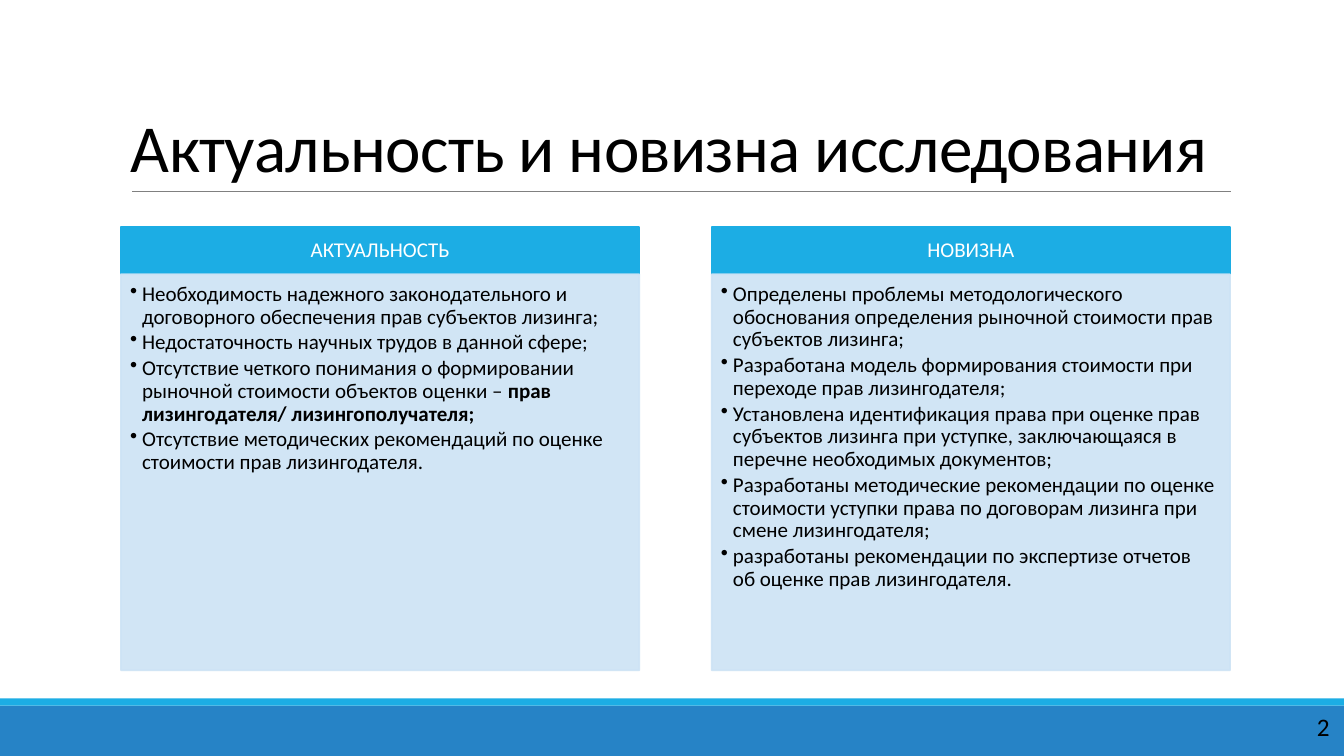
import dataclasses

import lxml.etree
import pptx
import pptx.dml.color
import pptx.enum.shapes
import pptx.enum.text
import pptx.oxml.ns
import pptx.util

Inches = pptx.util.Inches
Pt = pptx.util.Pt
ALIGN = pptx.enum.text.PP_ALIGN
ANCHOR = pptx.enum.text.MSO_ANCHOR


@dataclasses.dataclass(frozen=True)
class Theme:
    font: str = "Calibri"
    black: str = "000000"
    white: str = "FFFFFF"
    gray: str = "808080"
    blue: str = "2683C6"
    cyan: str = "1CADE4"
    pale: str = "CDE3F5"
    title: int = 48
    page: int = 18
    body: int = 15


THEME = Theme()

CARDS = [
    ("АКТУАЛЬНОСТЬ", [
        ["Необходимость надежного законодательного и договорного обеспечения прав субъектов лизинга;"],
        ["Недостаточность научных трудов в данной сфере;"],
        ["Отсутствие четкого понимания о формировании рыночной стоимости объектов оценки – ",
         "прав лизингодателя/ лизингополучателя;"],
        ["Отсутствие методических рекомендаций по оценке стоимости прав лизингодателя."],
    ]),
    ("НОВИЗНА", [
        ["Определены проблемы методологического обоснования определения рыночной стоимости прав субъектов лизинга;"],
        ["Разработана модель формирования стоимости при переходе прав лизингодателя;"],
        ["Установлена идентификация права при оценке прав субъектов лизинга при уступке, "
         "заключающаяся в перечне необходимых документов;"],
        ["Разработаны методические рекомендации по оценке стоимости уступки права "
         "по договорам лизинга при смене лизингодателя;"],
        ["разработаны рекомендации по экспертизе отчетов об оценке прав лизингодателя."],
    ]),
]


def color(code):
    return pptx.dml.color.RGBColor.from_string(code)


def add_node(parent, tag, **attrs):
    return lxml.etree.SubElement(parent, pptx.oxml.ns.qn(tag), **attrs)


def fade(fill, alpha):
    for node in fill.iter(pptx.oxml.ns.qn("a:srgbClr")):
        add_node(node, "a:alpha", val=str(alpha * 1000))


def write(shape, paras, size, ink=THEME.black, align=ALIGN.LEFT, anchor=ANCHOR.TOP,
          inset=(0.1, 0.05, 0.1, 0.05), lead=1.0, after=0, track=0, bullet=False, wrap=True):
    frame = shape.text_frame
    frame.word_wrap = wrap
    frame.vertical_anchor = anchor
    (frame.margin_left, frame.margin_top,
     frame.margin_right, frame.margin_bottom) = map(Inches, inset)
    for i, parts in enumerate(paras):
        para = frame.paragraphs[0] if i == 0 else frame.add_paragraph()
        para.alignment = align
        para.line_spacing = lead
        para.space_after = Pt(after)
        if bullet:
            props = para._p.get_or_add_pPr()
            props.set("marL", str(Inches(0.12)))
            props.set("indent", str(-Inches(0.12)))
            add_node(props, "a:buChar", char="•")
        for j, part in enumerate(parts):
            run = para.add_run()
            run.text = part
            run.font.name = THEME.font
            run.font.size = Pt(size)
            run.font.bold = j > 0
            run.font.color.rgb = color(ink)
            if track:
                run._r.get_or_add_rPr().set("spc", str(track))


def add_box(slide, place, fill, edge=False, alpha=100):
    box = slide.shapes.add_shape(pptx.enum.shapes.MSO_SHAPE.RECTANGLE, *map(Inches, place))
    box.shadow.inherit = False
    box.fill.solid()
    box.fill.fore_color.rgb = color(fill)
    if edge:
        box.line.color.rgb = color(fill)
        box.line.width = Pt(1.25)
    else:
        box.line.fill.background()
    if alpha < 100:
        fade(box._element.spPr, alpha)
    return box


def add_text(slide, place, text, size, **style):
    box = slide.shapes.add_textbox(*map(Inches, place))
    write(box, [[text]], size, **style)


def add_rule(slide, left, right, top):
    rule = slide.shapes.add_connector(pptx.enum.shapes.MSO_CONNECTOR.STRAIGHT,
                                      *map(Inches, (left, top, right, top)))
    rule.line.color.rgb = color(THEME.gray)
    rule.line.width = Pt(0.5)
    add_node(rule._element.spPr, "a:effectLst")


def add_card(slide, left, head, items):
    top, width, high = 2.25, 5.14, 0.47
    bar = add_box(slide, (left, top, width, high), THEME.cyan, edge=True)
    write(bar, [[head]], THEME.body, ink=THEME.white, align=ALIGN.CENTER, anchor=ANCHOR.MIDDLE,
          inset=(0.12, 0.07, 0.12, 0.07), lead=0.9)
    body = add_box(slide, (left, top + high, width, 3.93), THEME.pale, edge=True, alpha=90)
    write(body, items, THEME.body, inset=(0.09, 0.09, 0.12, 0.13),
          lead=0.9, after=2.25, bullet=True)


def main():
    deck = pptx.Presentation()
    deck.slide_width = Inches(13.33)
    deck.slide_height = Inches(7.5)
    slide = deck.slides.add_slide(deck.slide_layouts[6])
    add_box(slide, (0, 7, 13.33, 0.5), THEME.blue)
    add_box(slide, (0, 6.93, 13.33, 0.07), THEME.cyan)
    add_rule(slide, 1.31, 12.21, 1.9)
    add_text(slide, (1.2, 0.31, 11, 1.59), "Актуальность и новизна исследования", THEME.title,
             anchor=ANCHOR.BOTTOM, lead=0.85, track=-50)
    add_text(slide, (12.92, 7.01, 0.41, 0.4), "2", THEME.page, align=ALIGN.CENTER, wrap=False)
    for i, (head, items) in enumerate(CARDS):
        add_card(slide, 1.2 + i * 5.86, head, items)
    deck.save("out.pptx")


if __name__ == "__main__":
    main()
